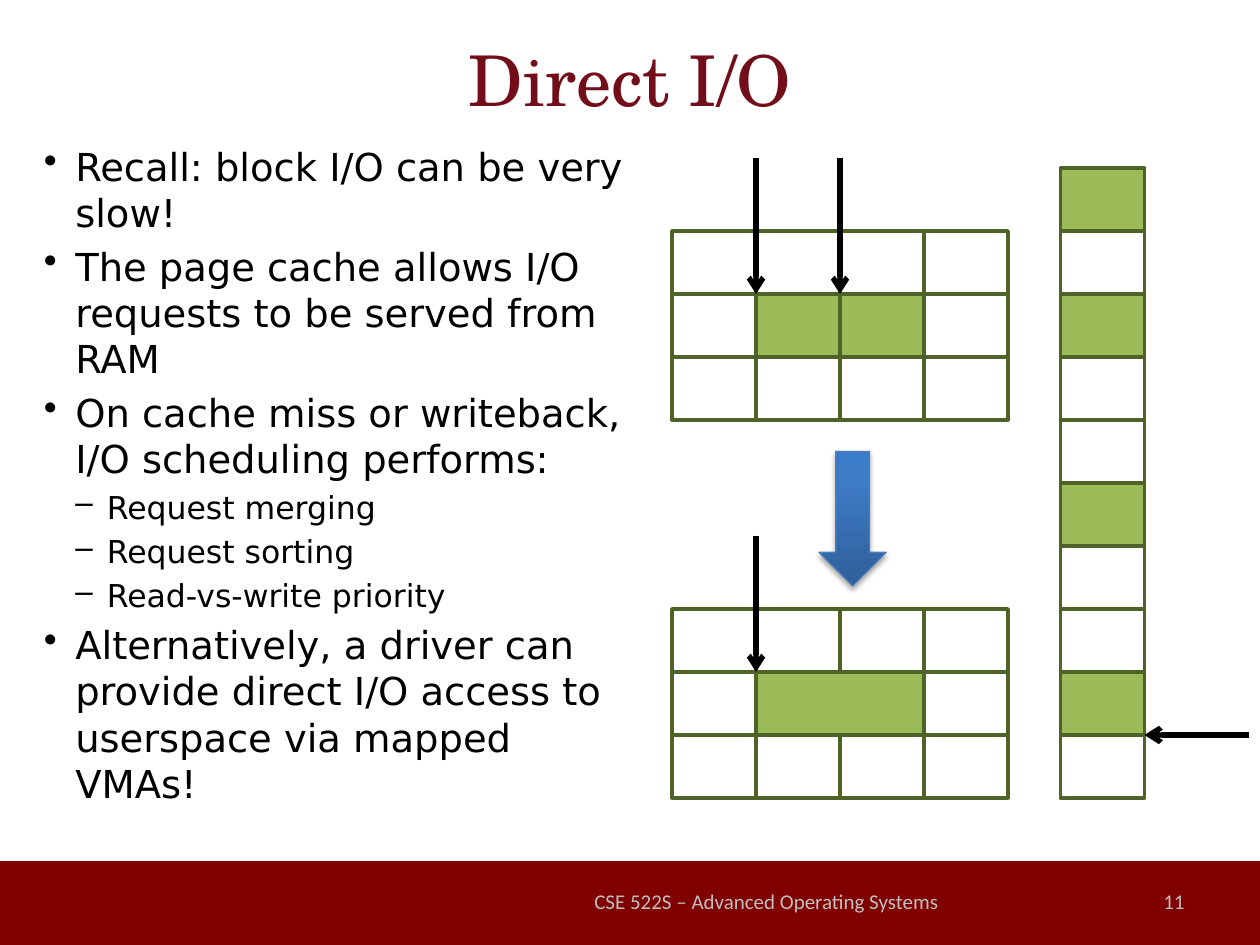
import copy

import pptx
import pptx.dml.color
import pptx.enum.shapes
import pptx.enum.text
import pptx.oxml
import pptx.oxml.ns
import pptx.util
from lxml import etree

Pt = pptx.util.Pt
RGBColor = pptx.dml.color.RGBColor
Shape = pptx.enum.shapes.MSO_SHAPE
Align = pptx.enum.text.PP_ALIGN
Anchor = pptx.enum.text.MSO_ANCHOR
qn = pptx.oxml.ns.qn

BLACK = RGBColor(0x00, 0x00, 0x00)
WHITE = RGBColor(0xFF, 0xFF, 0xFF)
MAROON = RGBColor(0x80, 0x00, 0x00)
TITLE_RED = RGBColor(0x72, 0x0D, 0x1A)
FOOTER_GREY = RGBColor(0xBF, 0xBF, 0xBF)
GREEN = RGBColor(0x9B, 0xBB, 0x59)
DARK_GREEN = RGBColor(0x4F, 0x62, 0x28)
ARROW_EDGE = RGBColor(0x4B, 0x7E, 0xBC)
ARROW_STOPS = [
    (0, RGBColor(0x2F, 0x5F, 0x99)),
    (0.8, RGBColor(0x3D, 0x7C, 0xC7)),
    (1, RGBColor(0x3A, 0x7C, 0xCB)),
]

TITLE_FONT = "TeX Gyre Schola"
BODY_FONT = "DejaVu Sans"
FOOTER_FONT = "Calibri"

CELL_WIDTH, CELL_HEIGHT = 48, 36
GRID_LEFT = 384
CACHE_TOP, MERGED_TOP = 132, 348
DISK_LEFT, DISK_TOP = 606, 96

# Outline level and wording
BULLETS = [
    (0, "Recall: block I/O can be very slow!"),
    (0, "The page cache allows I/O requests to be served from RAM"),
    (0, "On cache miss or writeback, I/O scheduling performs:"),
    (1, "Request merging"),
    (1, "Request sorting"),
    (1, "Read-vs-write priority"),
    (0, "Alternatively, a driver can provide direct I/O access to "
        "userspace via mapped VMAs!"),
]
LEVELS = [("•", 22), ("–", 18)]


def write(para, text, *, size, font, color, align=Align.LEFT):
    para.alignment = align
    span = para.add_run()
    span.text = text
    span.font.size = Pt(size)
    span.font.name = font
    span.font.color.rgb = color


def set_bullet(para, level, mark):
    """Give the paragraph a hanging bullet for its outline level."""
    properties = para._p.get_or_add_pPr()
    properties.set("marL", str(Pt(18 * (level + 1))))
    properties.set("indent", str(Pt(-18)))
    etree.SubElement(properties, qn("a:buChar"), char=mark)


class Slide:
    def __init__(self, page):
        self.shapes = page.shapes

    def text_frame(self, left, top, width, height, anchor):
        box = self.shapes.add_textbox(Pt(left), Pt(top), Pt(width), Pt(height))
        frame = box.text_frame
        frame.word_wrap = True
        frame.vertical_anchor = anchor
        return frame

    def label(self, text, left, top, width, height, **style):
        frame = self.text_frame(left, top, width, height, Anchor.MIDDLE)
        write(frame.paragraphs[0], text, **style)

    def bullets(self, items, left, top, width, height):
        frame = self.text_frame(left, top, width, height, Anchor.TOP)
        for index, (level, text) in enumerate(items):
            para = frame.add_paragraph() if index else frame.paragraphs[0]
            mark, size = LEVELS[level]
            para.level = level
            set_bullet(para, level, mark)
            if index:
                para.space_before = Pt(size * 0.2)
            write(para, text, size=size, font=BODY_FONT, color=BLACK)

    def shape(self, kind, left, top, width, height, *, fill=None, line=None,
              weight=2):
        shape = self.shapes.add_shape(
            kind, Pt(left), Pt(top), Pt(width), Pt(height))
        shape.shadow.inherit = False
        if fill is not None:
            shape.fill.solid()
            shape.fill.fore_color.rgb = fill
        if line is None:
            shape.line.fill.background()
        else:
            shape.line.color.rgb = line
            shape.line.width = Pt(weight)
        return shape

    def cell(self, left, top, fill=WHITE, span=1):
        self.shape(Shape.RECTANGLE, left, top, CELL_WIDTH * span, CELL_HEIGHT,
                   fill=fill, line=DARK_GREEN)

    def grid(self, left, top, rows, columns, filled):
        for row in range(rows):
            for column in range(columns):
                self.cell(left + column * CELL_WIDTH, top + row * CELL_HEIGHT,
                          GREEN if (row, column) in filled else WHITE)

    def pointer(self, start_x, start_y, end_x, end_y):
        line = self.shapes.add_connector(
            pptx.enum.shapes.MSO_CONNECTOR.STRAIGHT,
            Pt(start_x), Pt(start_y), Pt(end_x), Pt(end_y))
        line.line.color.rgb = BLACK
        line.line.width = Pt(3)
        etree.SubElement(line.line._get_or_add_ln(), qn("a:tailEnd"),
                         type="arrow")
        etree.SubElement(line._element.spPr, qn("a:effectLst"))

    def block_arrow(self, left, top, width, height):
        """Draw a down arrow with a three-stop gradient and a soft shadow."""
        arrow = self.shape(Shape.DOWN_ARROW, left, top, width, height,
                           line=ARROW_EDGE, weight=0.75)
        arrow.fill.gradient()
        arrow.fill.gradient_angle = 90
        properties = arrow._element.spPr
        stops = properties.find(qn("a:gradFill")).find(qn("a:gsLst"))
        stops.append(copy.deepcopy(stops[-1]))
        for stop, (position, color) in zip(arrow.fill.gradient_stops,
                                           ARROW_STOPS):
            stop.position = position
            stop.color.rgb = color
        shadow = etree.SubElement(
            properties.find(qn("a:effectLst")), qn("a:outerShdw"),
            blurRad=str(Pt(3.1)), dist=str(Pt(1.8)), dir="5400000",
            rotWithShape="0")
        color = etree.SubElement(shadow, qn("a:srgbClr"), val=str(BLACK))
        etree.SubElement(color, qn("a:alpha"), val="35000")


def main():
    deck = pptx.Presentation()
    deck.slide_width, deck.slide_height = Pt(720), Pt(540)
    slide = Slide(deck.slides.add_slide(deck.slide_layouts[6]))

    slide.shape(Shape.RECTANGLE, 0, 492, 720, 48, fill=MAROON)
    slide.label("Direct I/O", 36, 0, 648, 90, size=40, font=TITLE_FONT,
                color=TITLE_RED, align=Align.CENTER)
    slide.bullets(BULLETS, 18, 78, 354, 405)
    footer = {"size": 12, "font": FOOTER_FONT, "color": FOOTER_GREY}
    slide.label("CSE 522S – Advanced Operating Systems", 324, 500.5, 228, 28.75,
                align=Align.CENTER, **footer)
    slide.label("11", 516, 500.5, 168, 28.75, align=Align.RIGHT, **footer)

    # Two adjacent requests become one merged request
    first, second = GRID_LEFT + CELL_WIDTH, GRID_LEFT + 2 * CELL_WIDTH
    slide.grid(GRID_LEFT, CACHE_TOP, 3, 4, {(1, 1), (1, 2)})
    slide.grid(GRID_LEFT, MERGED_TOP, 3, 4, set())
    slide.cell(first, MERGED_TOP + CELL_HEIGHT, GREEN, span=2)
    for x, top in [(first, CACHE_TOP), (second, CACHE_TOP),
                   (first, MERGED_TOP)]:
        slide.pointer(x, top - 42, x, top + CELL_HEIGHT)
    slide.block_arrow(468, 258, 38.4, 76.8)

    # Sorted requests on the disk
    slide.grid(DISK_LEFT, DISK_TOP, 10, 1, {(0, 0), (2, 0), (5, 0), (8, 0)})
    head_y = DISK_TOP + 9 * CELL_HEIGHT
    slide.pointer(714, head_y, DISK_LEFT + CELL_WIDTH, head_y)

    deck.save("out.pptx")


if __name__ == "__main__":
    main()
